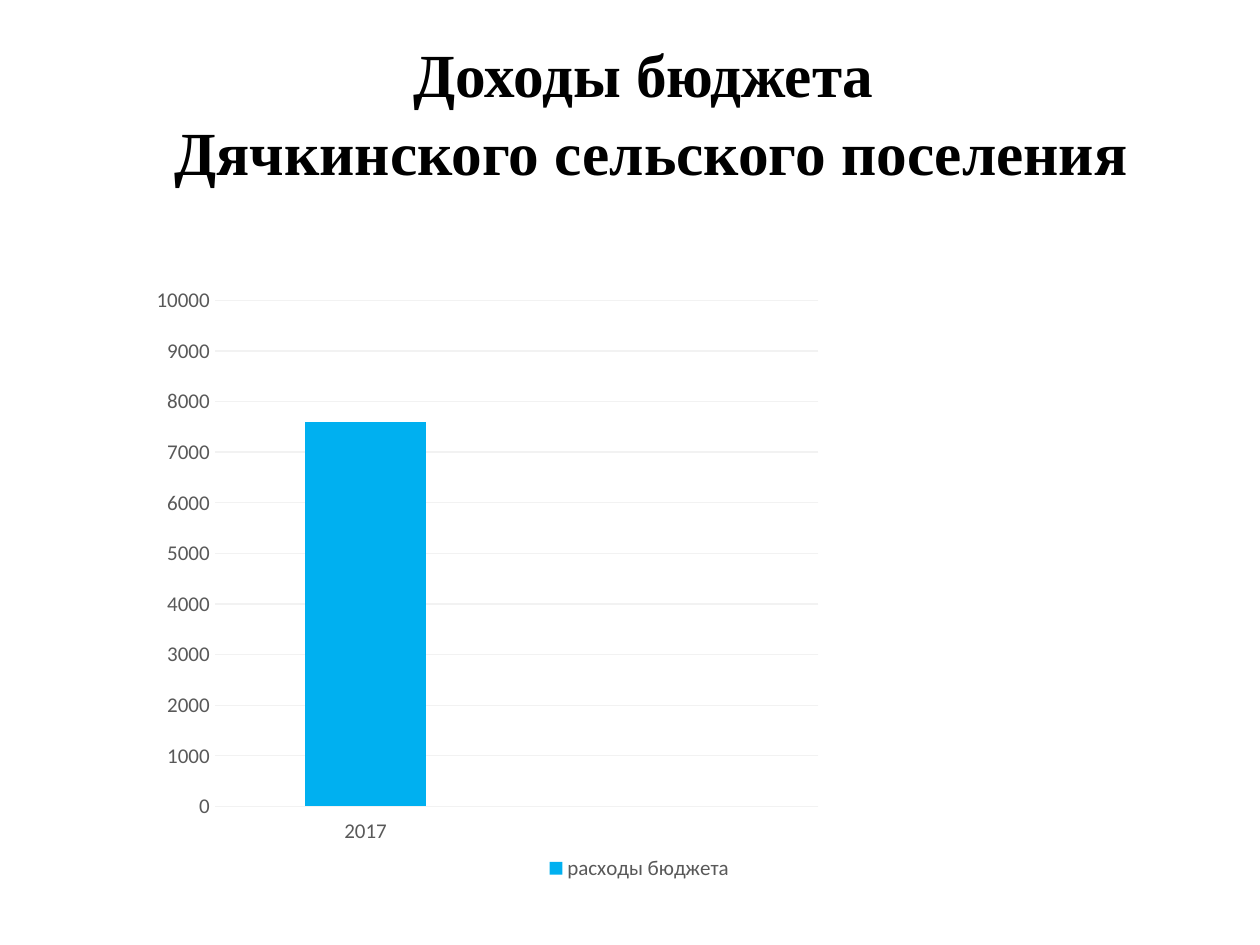
from lxml.etree import SubElement
from pptx import Presentation
from pptx.chart.data import CategoryChartData
from pptx.dml.color import RGBColor
from pptx.enum.chart import XL_CHART_TYPE, XL_LEGEND_POSITION, XL_TICK_LABEL_POSITION, XL_TICK_MARK
from pptx.enum.text import MSO_ANCHOR, MSO_AUTO_SIZE, PP_ALIGN
from pptx.oxml.ns import qn
from pptx.util import Inches, Pt

TITLE_LINES = ["Доходы бюджета ", "Дячкинского сельского поселения"]
YEARS = ["2017", ""]
SERIES_NAME = "расходы бюджета"
AMOUNTS = [7600, None]

COLORS = {"title": "000000", "label": "595959", "grid": "F2F2F2", "bar": "00B0F0"}
TITLE_FONT = {"name": "Times New Roman", "size": Pt(35), "bold": True}
LABEL_FONT = {"name": "Calibri", "size": Pt(12), "bold": False}
TITLE_AREA = (0.67, 0.25, 9, 1.25)
CHART_AREA = (0.64, 2.19, 8.87, 4.84)
PLOT_AREA = {"x": 0.12, "y": 0.04, "w": 0.54, "h": 0.83}


def format_font(font, values, color):
    for name, value in values.items():
        setattr(font, name, value)
    font.color.rgb = RGBColor.from_string(COLORS[color])


def add_title(page):
    title = page.shapes.title
    title.left, title.top, title.width, title.height = map(Inches, TITLE_AREA)
    frame = title.text_frame
    frame.word_wrap = True
    frame.auto_size = MSO_AUTO_SIZE.NONE
    frame.vertical_anchor = MSO_ANCHOR.MIDDLE
    frame.text = "\n".join(TITLE_LINES)
    for para in frame.paragraphs:
        para.alignment = PP_ALIGN.CENTER
        para.line_spacing = 1.05
        para.space_before = Pt(0)
        for span in para.runs:
            format_font(span.font, TITLE_FONT, "title")


def place_plot(chart):
    """Fix the inner plot area as fractions of the chart frame."""
    plot_area = chart.plots[0]._element.getparent()
    layout = plot_area.find(qn("c:layout"))
    if layout is None:
        layout = SubElement(plot_area, qn("c:layout"))
        plot_area.insert(0, layout)
    manual = SubElement(layout, qn("c:manualLayout"))
    settings = {"layoutTarget": "inner", "xMode": "edge", "yMode": "edge", **PLOT_AREA}
    for name, value in settings.items():
        SubElement(manual, qn(f"c:{name}")).set("val", str(value))


def add_budget_chart(page):
    data = CategoryChartData()
    data.categories = YEARS
    data.add_series(SERIES_NAME, AMOUNTS)
    chart = page.shapes.add_chart(
        XL_CHART_TYPE.COLUMN_CLUSTERED, *map(Inches, CHART_AREA), data).chart
    chart.has_title = False
    format_font(chart.font, LABEL_FONT, "label")

    plot = chart.plots[0]
    plot.gap_width = 150
    plot.vary_by_categories = False
    fill = plot.series[0].format.fill
    fill.solid()
    fill.fore_color.rgb = RGBColor.from_string(COLORS["bar"])

    for axis in (chart.category_axis, chart.value_axis):
        axis.major_tick_mark = axis.minor_tick_mark = XL_TICK_MARK.NONE
        axis.format.line.fill.background()
        format_font(axis.tick_labels.font, LABEL_FONT, "label")
    chart.category_axis.tick_label_position = XL_TICK_LABEL_POSITION.LOW

    values = chart.value_axis
    values.minimum_scale, values.maximum_scale, values.major_unit = 0, 10000, 1000
    values.has_major_gridlines = True
    grid = values.major_gridlines.format.line
    grid.width = Pt(0.75)
    grid.color.rgb = RGBColor.from_string(COLORS["grid"])

    chart.has_legend = True
    chart.legend.position = XL_LEGEND_POSITION.BOTTOM
    chart.legend.include_in_layout = False
    format_font(chart.legend.font, LABEL_FONT, "label")
    place_plot(chart)


def main():
    deck = Presentation()
    deck.slide_width, deck.slide_height = Inches(10), Inches(7.5)
    page = deck.slides.add_slide(deck.slide_layouts[5])
    add_title(page)
    add_budget_chart(page)
    deck.save("out.pptx")


if __name__ == "__main__":
    main()
